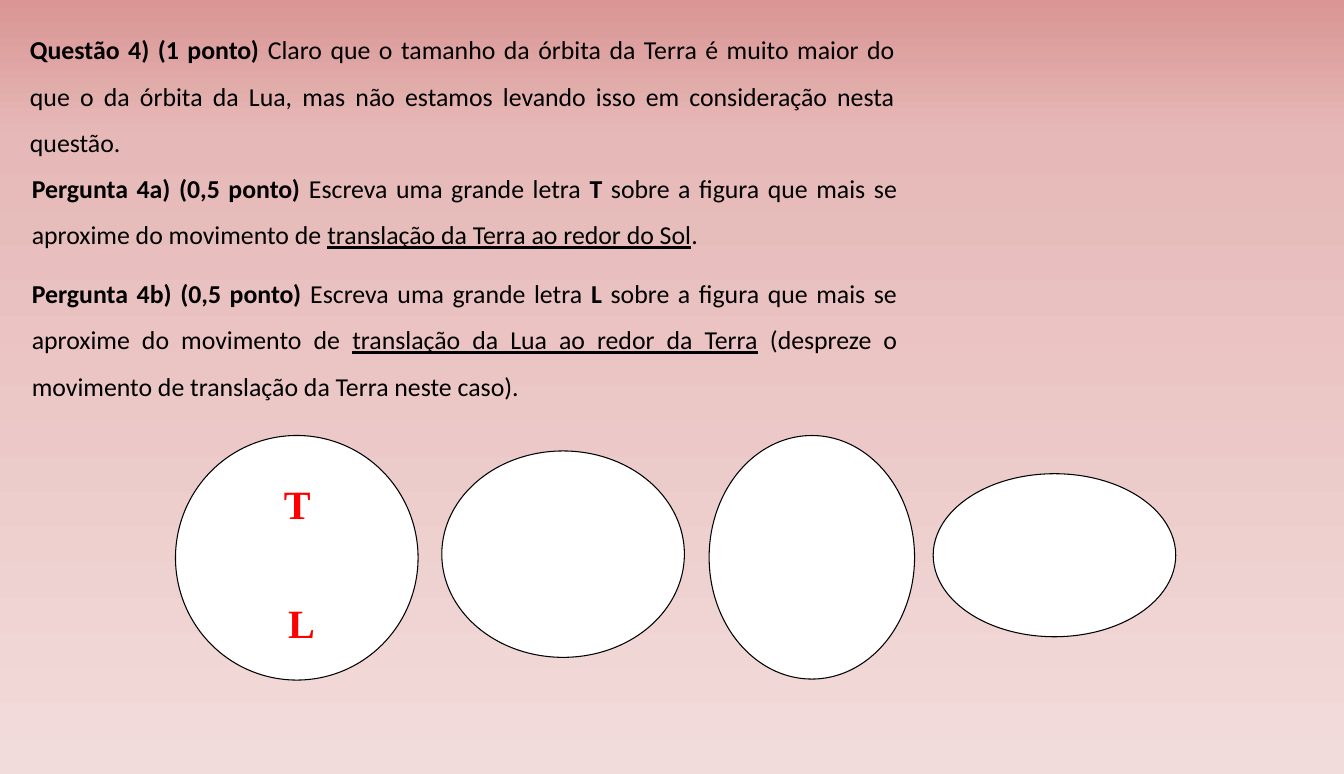
"""Build the slide of an astronomy question about orbit shapes."""
from copy import deepcopy

from pptx import Presentation
from pptx.dml.color import RGBColor
from pptx.enum.shapes import MSO_SHAPE
from pptx.enum.text import MSO_ANCHOR, MSO_AUTO_SIZE, PP_ALIGN
from pptx.oxml.ns import qn
from pptx.util import Inches, Pt

COLORS = {
    "top": "D99694",
    "upper": "E6B9B8",
    "bottom": "F2DCDB",
    "ink": "000000",
    "orbit": "FFFFFF",
    "answer": "FF0000",
}
QUESTION = [
    ("Questão 4) (1 ponto) ", "bold"),
    ("Claro que o tamanho da órbita da Terra é muito maior do que o da órbita da Lua, "
     "mas não estamos levando isso em consideração nesta questão.", ""),
]
EARTH_PART = [
    ("Pergunta 4a) (0,5 ponto) ", "bold"),
    ("Escreva uma grande letra ", ""),
    ("T", "bold"),
    (" sobre a figura que mais se aproxime do movimento de ", ""),
    ("translação da Terra ao redor do Sol", "underline"),
    (".", ""),
]
MOON_PART = [
    ("Pergunta 4b) (0,5 ponto) ", "bold"),
    ("Escreva uma grande letra ", ""),
    ("L", "bold"),
    (" sobre a figura que mais se aproxime do movimento de ", ""),
    ("translação da Lua ao redor da Terra", "underline"),
    (" (despreze o movimento de translação da Terra neste caso).", ""),
]
ORBITS = [
    (1.7, 4.22, 2.35, 2.37, 0),
    (4.28, 4.37, 2.35, 2, 0),
    (9.04, 4.59, 2.35, 1.58, 0),
    (6.87, 4.22, 1.99, 2.36, 180),
]


def color(name):
    """Return the named colour."""
    return RGBColor.from_string(COLORS[name])


def paint_background(page):
    """Fill the page with a three-stop gradient running downwards."""
    fill = page.background.fill
    fill.gradient()
    fill.gradient_angle = 270
    stop_list = page.element.find(".//" + qn("a:gsLst"))
    stop_list.append(deepcopy(stop_list[-1]))
    stops = [(0, "top"), (0.18, "upper"), (1, "bottom")]
    for stop, (position, name) in zip(fill.gradient_stops, stops):
        stop.position = position
        stop.color.rgb = color(name)


def place(box, left, top, width, height):
    """Move and resize a box."""
    box.left, box.top = Inches(left), Inches(top)
    box.width, box.height = Inches(width), Inches(height)


def set_font(para, name, size, color_name):
    """Format a whole paragraph."""
    para.font.name = name
    para.font.size = Pt(size)
    para.font.color.rgb = color(color_name)


def write_question(box, spans, left, top, height):
    """Write a justified question text with bold and underlined spans."""
    place(box, left, top, 8.58, height)
    frame = box.text_frame
    frame.word_wrap = True
    frame.auto_size = MSO_AUTO_SIZE.SHAPE_TO_FIT_TEXT
    frame.vertical_anchor = MSO_ANCHOR.TOP
    para = frame.paragraphs[0]
    para.alignment = PP_ALIGN.JUSTIFY
    para.line_spacing = 1.5
    set_font(para, "Calibri", 18, "ink")
    for text, style in spans:
        span = para.add_run()
        span.text = text
        span.font.bold = style == "bold"
        span.font.underline = style == "underline"


def add_text_box(page):
    """Add an empty text box, to be placed later."""
    return page.shapes.add_textbox(0, 0, 0, 0)


def add_orbit(group, left, top, width, height, rotation):
    """Add one white ellipse."""
    orbit = group.shapes.add_shape(
        MSO_SHAPE.OVAL, Inches(left), Inches(top), Inches(width), Inches(height))
    orbit.rotation = rotation
    orbit.shadow.inherit = False
    orbit.fill.solid()
    orbit.fill.fore_color.rgb = color("orbit")
    orbit.line.color.rgb = color("ink")
    orbit.line.width = Pt(0.75)


def add_answer(page, letter, left, top):
    """Add a large red answer letter."""
    box = add_text_box(page)
    place(box, left, top, 0.46, 0.57)
    frame = box.text_frame
    frame.word_wrap = False
    frame.auto_size = MSO_AUTO_SIZE.SHAPE_TO_FIT_TEXT
    para = frame.paragraphs[0]
    para.text = letter
    para.alignment = PP_ALIGN.CENTER
    set_font(para, "Times New Roman", 28, "answer")
    para.font.bold = True


def main():
    """Build and save the deck."""
    deck = Presentation()
    deck.slide_width, deck.slide_height = Inches(13.02), Inches(7.5)
    page = deck.slides.add_slide(deck.slide_layouts.get_by_name("Title Only"))
    paint_background(page)
    write_question(page.shapes.title, QUESTION, 0.19, 0.13, 1.46)
    write_question(add_text_box(page), EARTH_PART, 0.21, 1.47, 1.01)
    write_question(add_text_box(page), MOON_PART, 0.21, 2.49, 1.42)
    group = page.shapes.add_group_shape()
    for orbit in ORBITS:
        add_orbit(group, *orbit)
    add_answer(page, "T", 2.65, 4.6)
    add_answer(page, "L", 2.69, 5.75)
    deck.save("out.pptx")


if __name__ == "__main__":
    main()
